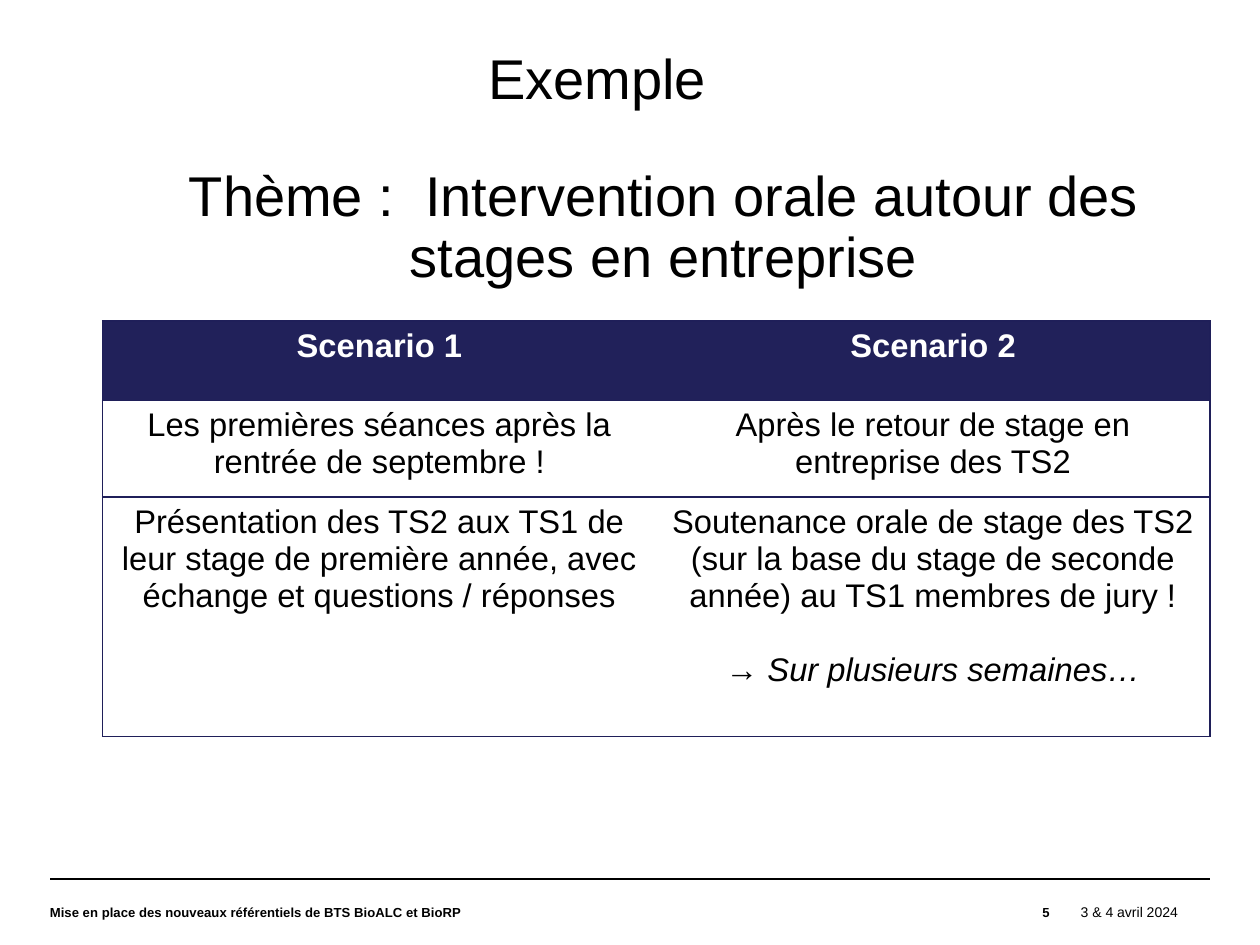
from dataclasses import dataclass

from lxml import etree
from pptx import Presentation
from pptx import util as u
from pptx.dml.color import RGBColor
from pptx.enum import shapes, text
from pptx.oxml import ns

LEFT, MID, RIGHT = text.PP_ALIGN.LEFT, text.PP_ALIGN.CENTER, text.PP_ALIGN.RIGHT


@dataclass(frozen=True)
class Theme:
    font: str = "Arial"
    ink: str = "000000"
    light: str = "FFFFFF"
    head: str = "21215A"
    edge: str = "1F1F59"
    title: float = 24
    body: float = 14
    date: float = 6
    foot: float = 5.6


class Page:
    def __init__(self, deck, theme):
        self.theme = theme
        self.slide = deck.slides.add_slide(deck.slide_layouts[6])

    def run(self, par, words, size, color=None, bold=False, italic=False):
        run = par.add_run()
        run.text = words
        font = run.font
        font.name, font.size = self.theme.font, u.Pt(size)
        font.bold, font.italic = bold, italic
        font.color.rgb = RGBColor.from_string(color or self.theme.ink)

    def label(self, box, words, size, align=MID, bold=False, pitch=1.0):
        frame = self.slide.shapes.add_textbox(*map(u.Pt, box)).text_frame
        frame.word_wrap = True
        frame.vertical_anchor = text.MSO_ANCHOR.MIDDLE
        frame.margin_left = frame.margin_right = 0
        frame.margin_top = frame.margin_bottom = 0
        par = frame.paragraphs[0]
        par.alignment, par.line_spacing = align, pitch
        self.run(par, words, size, bold=bold)

    def rule(self, x1, x2, y, width):
        line = self.slide.shapes.add_connector(
            shapes.MSO_CONNECTOR.STRAIGHT, *map(u.Pt, (x1, y, x2, y)))
        line.line.color.rgb = RGBColor.from_string(self.theme.ink)
        line.line.width = u.Pt(width)
        etree.SubElement(line._element.spPr, ns.qn("a:effectLst"))

    def border(self, cell, sides):
        props = cell._tc.get_or_add_tcPr()
        for side in "LRTB":
            line = etree.SubElement(props, ns.qn("a:ln" + side))
            if side in sides:
                line.set("w", str(u.Pt(0.75)))
                fill = etree.SubElement(line, ns.qn("a:solidFill"))
                etree.SubElement(fill, ns.qn("a:srgbClr"), val=self.theme.edge)
            else:
                line.set("w", "0")
                etree.SubElement(line, ns.qn("a:noFill"))

    def cell(self, cell, words, sides, head):
        self.border(cell, sides)
        cell.margin_left = cell.margin_right = u.Pt(5)
        cell.margin_top = cell.margin_bottom = u.Pt(3)
        if head:
            cell.fill.solid()
            cell.fill.fore_color.rgb = RGBColor.from_string(self.theme.head)
        else:
            cell.fill.background()
        color = self.theme.light if head else self.theme.ink
        frame = cell.text_frame
        for i, line in enumerate(words):
            par = frame.add_paragraph() if i else frame.paragraphs[0]
            par.alignment = MID
            if i:
                par.space_before = u.Pt(16)
            self.run(par, line, self.theme.body, color, bold=head, italic=i > 0)

    def table(self, x, y, wide, highs, rows):
        count = len(rows[0])
        grid = self.slide.shapes.add_table(
            len(rows), count, *map(u.Pt, (x, y, wide * count, sum(highs)))).table
        grid.first_row = grid.horz_banding = False
        for col in grid.columns:
            col.width = u.Pt(wide)
        for r, (high, row) in enumerate(zip(highs, rows)):
            grid.rows[r].height = u.Pt(high)
            for c, words in enumerate(row):
                sides = "TB" + "L" * (c == 0) + "R" * (c == count - 1)
                self.cell(grid.cell(r, c), words, sides, head=r == 0)


def main():
    deck = Presentation()
    deck.slide_width, deck.slide_height = u.Pt(540), u.Pt(405)
    theme = Theme()
    page = Page(deck, theme)

    # Headings
    page.label((117.4, 13.7, 277, 42.5), "Exemple", theme.title, pitch=0.9)
    page.label((50.4, 64, 468, 68),
               "Thème :  Intervention orale autour des stages en entreprise",
               theme.title, pitch=0.9)

    # Scenarios
    page.table(44, 137.6, 237.3, (34, 41.5, 102.5), [
        (["Scenario 1"], ["Scenario 2"]),
        (["Les premières séances après la rentrée de septembre !"],
         ["Après le retour de stage en entreprise des TS2"]),
        (["Présentation des TS2 aux TS1 de leur stage de première année, "
          "avec échange et questions / réponses"],
         ["Soutenance orale de stage des TS2 (sur la base du stage de "
          "seconde année) au TS1 membres de jury !",
          "→ Sur plusieurs semaines…"]),
    ])

    # Footer
    top, high = 376.8, 28
    page.rule(21.6, 518.4, top, 0.8)
    page.label((21.4, top, 348.5, high),
               "Mise en place des nouveaux référentiels de BTS BioALC et BioRP",
               theme.foot, LEFT, bold=True)
    page.label((370, top, 79.8, high), "5", theme.foot, RIGHT, bold=True)
    page.label((449.5, top, 69, high), "3 & 4 avril 2024", theme.date)

    deck.save("out.pptx")


if __name__ == "__main__":
    main()
